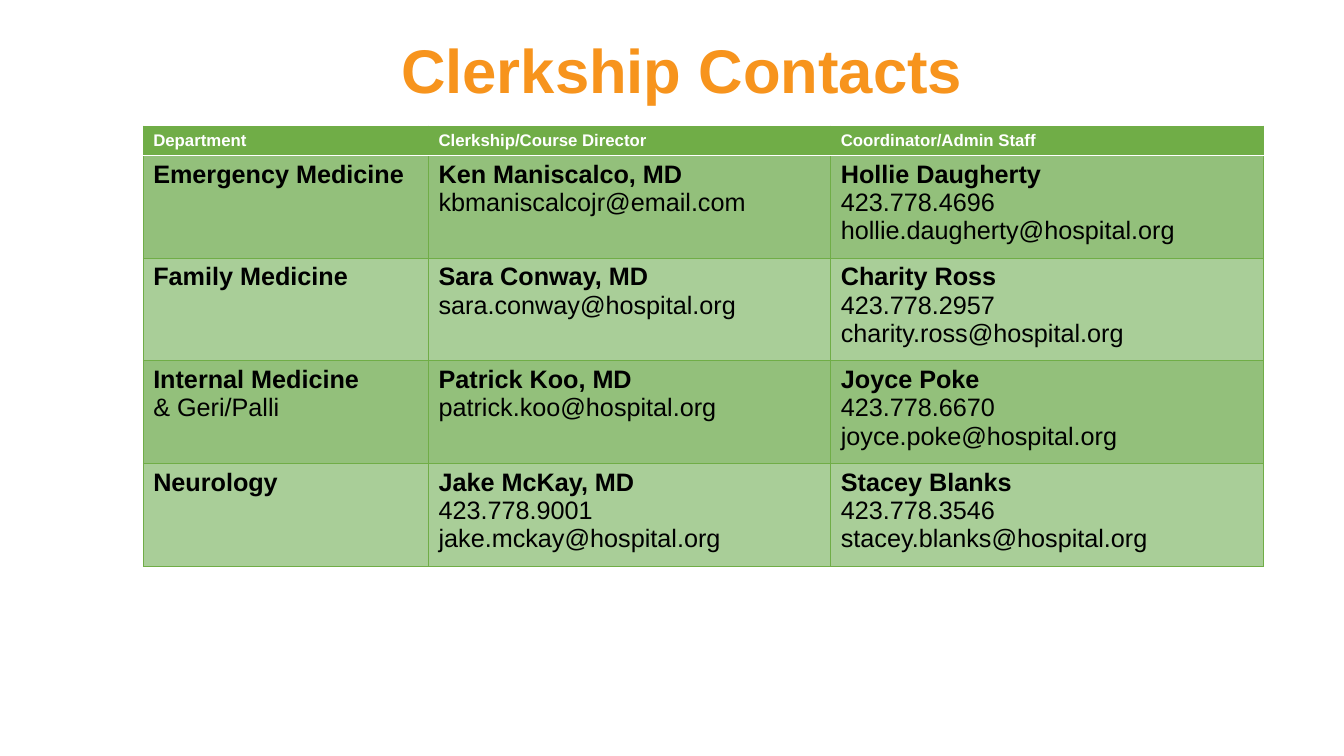
from dataclasses import dataclass

from lxml import etree
from pptx import Presentation
from pptx import util as u
from pptx.dml.color import RGBColor
from pptx.enum import text
from pptx.oxml import ns


@dataclass
class Theme:
    font: str = "Arial"
    orange: str = "F7941D"
    green: str = "70AD47"
    dark: str = "93C07B"
    light: str = "A9CE98"
    white: str = "FFFFFF"
    black: str = "000000"
    title: int = 44
    head: int = 12
    body: int = 18


class Page:
    def __init__(self, slide, theme):
        self.slide = slide
        self.theme = theme

    def style(self, para, size, color, bold):
        for run in para.runs:
            font = run.font
            font.name = self.theme.font
            font.size = u.Pt(size)
            font.bold = bold
            font.color.rgb = RGBColor.from_string(color)

    def title(self, words, left, top, width, height):
        box = self.slide.shapes.add_textbox(
            *map(u.Inches, (left, top, width, height)))
        frame = box.text_frame
        frame.word_wrap = True
        frame.vertical_anchor = text.MSO_ANCHOR.MIDDLE
        frame.text = words
        para = frame.paragraphs[0]
        para.alignment = text.PP_ALIGN.CENTER
        para.line_spacing = 0.9
        self.style(para, self.theme.title, self.theme.orange, True)

    def edge(self, cell, side, color, width):
        props = cell._tc.get_or_add_tcPr()
        line = etree.SubElement(props, ns.qn("a:ln" + side),
                                w=str(u.Pt(width)))
        fill = etree.SubElement(line, ns.qn("a:solidFill"))
        etree.SubElement(fill, ns.qn("a:srgbClr"), val=color)

    def cell(self, cell, words, row):
        theme = self.theme
        head = row == 0
        # Borders: a white rule parts the header from the body
        rules = {"T": row == 1, "B": head}
        for side in "LRTB":
            white = rules.get(side, False)
            self.edge(cell, side, theme.white if white else theme.green,
                      1 if white else 0.5)
        # Fill: header, then alternating bands
        fill = theme.green if head else (theme.light, theme.dark)[row % 2]
        cell.fill.solid()
        cell.fill.fore_color.rgb = RGBColor.from_string(fill)
        # Text: the first line of each cell is bold
        cell.vertical_anchor = (text.MSO_ANCHOR.BOTTOM if head
                                else text.MSO_ANCHOR.TOP)
        cell.text_frame.text = words
        for i, para in enumerate(cell.text_frame.paragraphs):
            self.style(para, theme.head if head else theme.body,
                       theme.white if head else theme.black, i == 0)

    def table(self, data, left, top, cols, rows):
        frame = self.slide.shapes.add_table(
            len(rows), len(cols),
            *map(u.Inches, (left, top, sum(cols), sum(rows))))
        table = frame.table
        for col, width in zip(table.columns, cols):
            col.width = u.Inches(width)
        for row, height in zip(table.rows, rows):
            row.height = u.Inches(height)
        for r, line in enumerate(data):
            for c, words in enumerate(line):
                self.cell(table.cell(r, c), words, r)


STAFF = [
    ("Department", "Clerkship/Course Director", "Coordinator/Admin Staff"),
    ("Emergency Medicine",
     "Ken Maniscalco, MD\nkbmaniscalcojr@email.com",
     "Hollie Daugherty\n423.778.4696\nhollie.daugherty@hospital.org"),
    ("Family Medicine",
     "Sara Conway, MD\nsara.conway@hospital.org",
     "Charity Ross\n423.778.2957\ncharity.ross@hospital.org"),
    ("Internal Medicine\n& Geri/Palli",
     "Patrick Koo, MD\npatrick.koo@hospital.org",
     "Joyce Poke\n423.778.6670\njoyce.poke@hospital.org"),
    ("Neurology",
     "Jake McKay, MD\n423.778.9001\njake.mckay@hospital.org",
     "Stacey Blanks\n423.778.3546\nstacey.blanks@hospital.org"),
]


def main():
    deck = Presentation()
    deck.slide_width = u.Inches(13.33)
    deck.slide_height = u.Inches(7.5)
    page = Page(deck.slides.add_slide(deck.slide_layouts[6]), Theme())

    # Contact table
    page.table(STAFF, 1.42, 1.25, (2.83, 3.99, 4.29), [0.29] + [1.02] * 4)

    # Heading
    page.title("Clerkship Contacts", 0.1, 0, 13.33, 1.45)

    deck.save("out.pptx")


if __name__ == "__main__":
    main()
